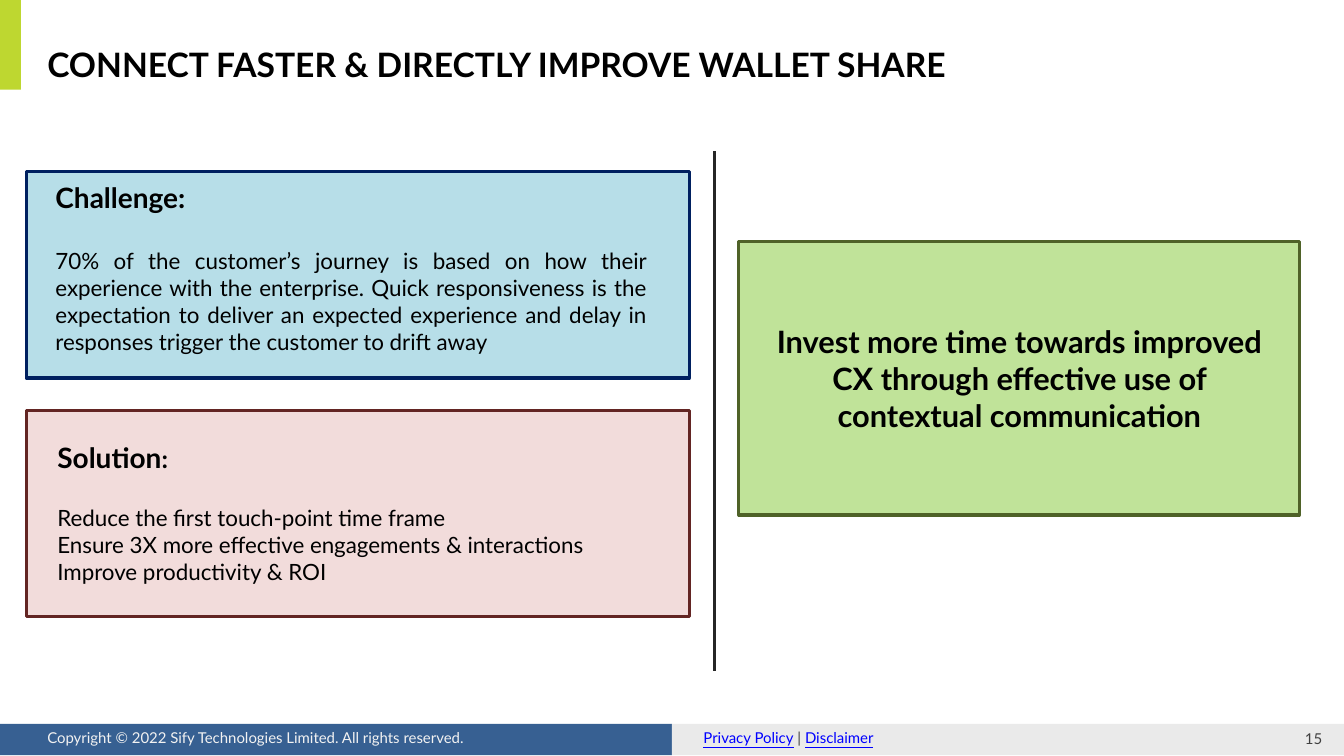
import pptx
import pptx.util
import pptx.dml.color
import pptx.enum.shapes
import pptx.enum.text
import pptx.oxml.ns
import lxml.etree

Pt = pptx.util.Pt
ALIGN = pptx.enum.text.PP_ALIGN
ANCHOR = pptx.enum.text.MSO_ANCHOR
FONT = "Lato"
WIDTH, HEIGHT = 960, 540


def color(value):
    return pptx.dml.color.RGBColor.from_string(value)


def add_rect(s, box, fill, line=None):
    sp = s.shapes.add_shape(pptx.enum.shapes.MSO_SHAPE.RECTANGLE, *map(Pt, box))
    sp.shadow.inherit = False
    sp.fill.solid()
    sp.fill.fore_color.rgb = color(fill)
    if line:
        sp.line.color.rgb = color(line)
        sp.line.width = Pt(2.25)
    else:
        sp.line.fill.background()


def run(text, size, rgb="000000", bold=False, underline=False):
    return text, size, rgb, bold, underline


def add_text(s, box, paragraphs, align=ALIGN.LEFT, anchor=ANCHOR.TOP, gap=0):
    tf = s.shapes.add_textbox(*map(Pt, box)).text_frame
    tf.word_wrap = True
    tf.vertical_anchor = anchor
    tf.margin_left = tf.margin_right = tf.margin_top = tf.margin_bottom = 0
    for i, runs in enumerate(paragraphs):
        p = tf.paragraphs[0] if i == 0 else tf.add_paragraph()
        p.alignment = align
        if i == 1:
            p.space_before = Pt(gap)
        for text, size, rgb, bold, underline in runs:
            r = p.add_run()
            r.text = text
            r.font.name = FONT
            r.font.size = Pt(size)
            r.font.color.rgb = color(rgb)
            r.font.bold = bold
            r.font.underline = underline


def add_header(s, box, title):
    x, y, w, h = box
    add_rect(s, (x, y, 15, h), "BED730")
    add_text(s, (x + 33.8, y + 28, w - 170, 36), [[run(title, 24, bold=True)]],
             anchor=ANCHOR.MIDDLE)


def add_panel(s, box, fill, line, inset, heading, lines, gap):
    x, y, w, h = box
    left, top = inset
    add_rect(s, box, fill, line)
    body = [[run(text, 16)] for text in lines]
    add_text(s, (x + left, y + top, 422.6, h - top), [heading] + body,
             ALIGN.JUSTIFY, gap=gap)


def add_callout(s, box, text):
    x, y, w, h = box
    add_rect(s, box, "C0E399", "4F6228")
    add_text(s, (x + 13.7, y, w - 27, h), [[run(text, 22, bold=True)]],
             ALIGN.CENTER, ANCHOR.MIDDLE)


def add_divider(s, x, top, bottom):
    line = s.shapes.add_connector(pptx.enum.shapes.MSO_CONNECTOR.STRAIGHT,
                                  Pt(x), Pt(top), Pt(x), Pt(bottom))
    line.line.color.rgb = color("262626")
    line.line.width = Pt(2.25)
    lxml.etree.SubElement(line._element.spPr, pptx.oxml.ns.qn("a:effectLst"))


def add_footer(s, box, notice, links, number):
    x, y, w, h = box
    half = w / 2
    size = 10.7
    add_rect(s, (x, y, half, h), "376092")
    add_rect(s, (x + half, y, half, h), "EAEAEA")
    link_runs = [run(links[0], size, "0000FF", underline=True),
                 run(" | ", size, "404040"),
                 run(links[1], size, "0000FF", underline=True)]
    add_text(s, (x + 33.8, y + 3.6, 394, 16), [[run(notice, size, "F2F2F2")]])
    add_text(s, (x + half + 22.5, y + 3.6, 303, 16), [link_runs])
    add_text(s, (x + w - 39, y + 3, 34.6, 15), [[run(number, size, "404040")]],
             ALIGN.CENTER, ANCHOR.MIDDLE)


def main():
    prs = pptx.Presentation()
    prs.slide_width, prs.slide_height = Pt(WIDTH), Pt(HEIGHT)
    s = prs.slides.add_slide(prs.slide_layouts[6])
    add_footer(s, (0, 517, WIDTH, 22.5),
               "Copyright © 2022 Sify Technologies Limited. All rights reserved.",
               ("Privacy Policy", "Disclaimer"), "15")
    add_header(s, (0, 0, WIDTH, 64), "CONNECT FASTER & DIRECTLY IMPROVE WALLET SHARE")
    add_panel(s, (18.7, 122.4, 473.8, 147.6), "B7DEE8", "002060", (20.9, 6.3),
              [run("Challenge:", 20, bold=True)],
              ["70% of the customer’s journey is based on how their experience with "
               "the enterprise. Quick responsiveness is the expectation to deliver an "
               "expected experience and delay in responses trigger the customer to "
               "drift away"], 24)
    add_panel(s, (18.7, 293, 473.8, 147.6), "F2DCDB", "632523", (22.3, 21.6),
              [run("Solution", 20, bold=True), run(":", 18, bold=True)],
              ["Reduce the first touch-point time frame",
               "Ensure 3X more effective engagements & interactions",
               "Improve productivity & ROI"], 21.6)
    add_divider(s, 510.5, 108, 479.5)
    add_callout(s, (527.8, 172.8, 400.3, 195.1),
                "Invest more time towards improved CX through effective use of "
                "contextual communication")
    prs.save("out.pptx")


if __name__ == "__main__":
    main()
